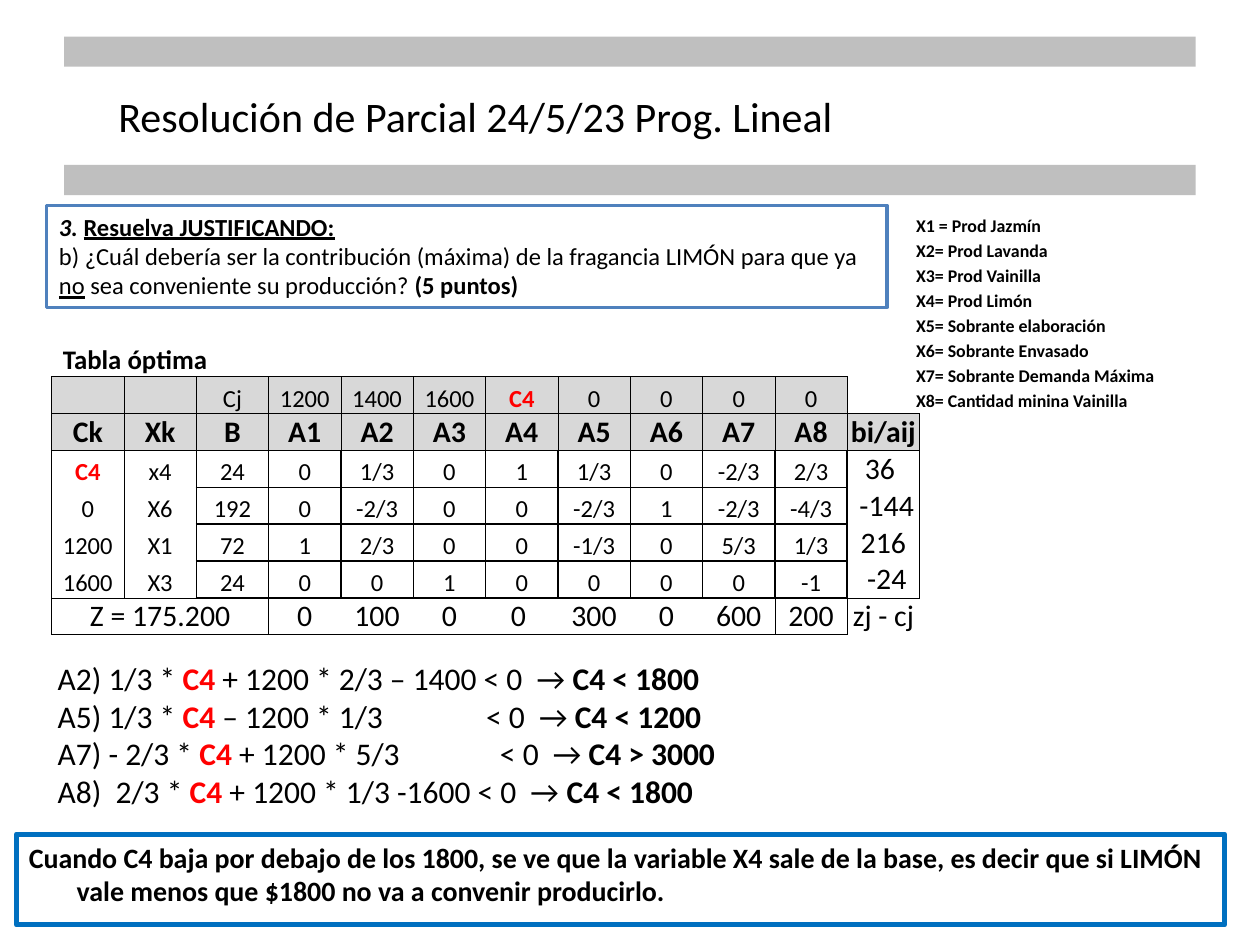
from pptx import Presentation
from pptx.dml.color import RGBColor
from pptx.enum.shapes import MSO_SHAPE as Form
from pptx.enum.text import MSO_ANCHOR as Anchor, PP_ALIGN as Align
from pptx.oxml.ns import qn
from pptx.util import Inches, Pt
from lxml.etree import SubElement

TITLE = "Resolución de Parcial 24/5/23 Prog. Lineal"
QUERY = [
    [("3. ", "bi"), ("Resuelva JUSTIFICANDO:", "bu")],
    [("b) ¿Cuál debería ser la contribución (máxima) de la fragancia LIMÓN para que ya ", ""),
     ("no", "u"), (" sea conveniente su producción? ", ""), ("(5 puntos)", "b")],
]
LEGEND = ["X1 = Prod Jazmín", "X2= Prod Lavanda", "X3= Prod Vainilla", "X4= Prod Limón",
          "X5= Sobrante elaboración", "X6= Sobrante Envasado",
          "X7= Sobrante Demanda Máxima", "X8= Cantidad minina Vainilla"]
GRID = [
    "||Cj|1200|1400|1600|C4|0|0|0|0|",
    "Ck|Xk|B|A1|A2|A3|A4|A5|A6|A7|A8|bi/aij",
    "C4|x4|24|0|1/3|0|1|1/3|0|-2/3|2/3|36 ",
    "0|X6|192|0|-2/3|0|0|-2/3|1|-2/3|-4/3| -144",
    "1200|X1|72|1|2/3|0|0|-1/3|0|5/3|1/3|216",
    "1600|X3|24|0|0|1|0|0|0|0|-1| -24",
    "Z = 175.200|||0|100|0|0 |300|0|600|200|zj - cj",
]
TESTS = [
    ("A2) 1/3 * ", "C4", " + 1200 * 2/3 – 1400 < 0  → ", "C4 < 1800", None),
    ("A5) 1/3 * ", "C4", " – 1200 * 1/3\t< 0  → ", "C4 < 1200", 3.4),
    ("A7) - 2/3 * ", "C4 ", "+ 1200 * 5/3\t< 0  → ", "C4 > 3000", 3.51),
    ("A8)  2/3 * ", "C4", " + 1200 * 1/3 -1600 < 0  → ", "C4 < 1800", None),
]
RESULT = ("Cuando C4 baja por debajo de los 1800, se ve que la variable X4 sale de la base, "
          "es decir que si LIMÓN vale menos que $1800 no va a convenir producirlo.")
BLACK, RED, GREY = "000000", "FF0000", "BFBFBF"


def color(code):
    return RGBColor.from_string(code)


def place(shape, box):
    shape.left, shape.top, shape.width, shape.height = map(Inches, box)


def write(para, runs, size):
    for text, style in runs:
        run = para.add_run()
        run.text = text
        font = run.font
        font.name, font.size = "Calibri", Pt(size)
        font.bold, font.italic, font.underline = (key in style for key in "biu")
        font.color.rgb = color(RED if "r" in style else BLACK)


def fill_text(shape, paras, size, hang=False, stops=()):
    frame = shape.text_frame
    frame.word_wrap = True
    frame.vertical_anchor = Anchor.TOP
    for i, runs in enumerate(paras):
        para = frame.add_paragraph() if i else frame.paragraphs[0]
        para.alignment = Align.LEFT
        para.space_before = Pt(size * 0.2 if hang and i else 0)
        props = para._p.get_or_add_pPr()
        if hang:
            props.set("marL", str(Inches(0.38)))
            props.set("indent", str(Inches(-0.38)))
            SubElement(props, qn("a:buNone"))
        if stops and stops[i]:
            tabs = SubElement(props, qn("a:tabLst"))
            SubElement(tabs, qn("a:tab"), pos=str(Inches(stops[i])), algn="l")
        write(para, runs, size)


def rect(box, fill=None, line=None, width=0):
    shape = slide.shapes.add_shape(Form.RECTANGLE, *map(Inches, box))
    shape.shadow.inherit = False
    if fill:
        shape.fill.solid()
        shape.fill.fore_color.rgb = color(fill)
    else:
        shape.fill.background()
    if line:
        shape.line.color.rgb = color(line)
        shape.line.width = Pt(width)
    else:
        shape.line.fill.background()
    return shape


def label(box):
    return slide.shapes.add_textbox(*map(Inches, box))


def sides(row, col):
    if row == 0 and col == 11:
        return "LB"
    if row == 6:
        return {3: "LTB", 9: "RTB", 11: "LT"}.get(col, "TB" if 3 < col < 9 else "LRTB")
    if row > 1 and col in (0, 1, 11):
        return "LR" + "T" * (row == 2) + "B" * (row == 5)
    return "LRTB"


def border(cell, row, col):
    props = cell._tc.get_or_add_tcPr()
    wide = 1 if 1 < row < 6 and 1 < col < 11 else 0.5
    shown = sides(row, col)
    for i, side in enumerate("LRTB"):
        line = SubElement(props, qn("a:ln" + side), w=str(Pt(wide)))
        props.remove(line)
        props.insert(i, line)
        if side in shown:
            paint = SubElement(line, qn("a:solidFill"))
            SubElement(paint, qn("a:srgbClr"), val=BLACK)
        else:
            SubElement(line, qn("a:noFill"))


def fill_cell(cell, text, row, col):
    cell.margin_left = cell.margin_right = cell.margin_top = cell.margin_bottom = 0
    cell.vertical_anchor = Anchor.MIDDLE if (row, col) == (1, 11) else Anchor.BOTTOM
    if row < 2 and (row, col) != (0, 11):
        cell.fill.solid()
        cell.fill.fore_color.rgb = color("D8D8D8")
    else:
        cell.fill.background()
    border(cell, row, col)
    para = cell.text_frame.paragraphs[0]
    para.alignment = Align.CENTER
    if text:
        style = "br" if text == "C4" else "b" if row == 1 else ""
        write(para, [(text, style)], 17 if row in (1, 6) or col == 11 else 14)
    else:
        SubElement(para._p, qn("a:endParaRPr"), sz="1400")


deck = Presentation()
deck.slide_width, deck.slide_height = Inches(10), Inches(7.5)
slide = deck.slides.add_slide(deck.slide_layouts[1])

for top in (0.29, 1.31):
    rect((0.51, top, 8.98, 0.24), GREY)

title = slide.shapes.title
place(title, (0.5, 0.3, 6.55, 1.24))
title.text_frame.vertical_anchor = Anchor.MIDDLE
head = title.text_frame.paragraphs[0]
head.alignment = Align.CENTER
write(head, [(TITLE, "")], 24)

fill_text(label((0.4, 2.67, 2.04, 0.36)), [[("Tabla óptima", "b")]], 15.3, hang=True)
fill_text(rect((0.37, 1.63, 6.67, 0.81), "FFFFFF", "4F81BD", 2), QUERY, 14)

legend = slide.placeholders[1]
place(legend, (7.17, 1.65, 2.59, 1.66))
fill_text(legend, [[(item, "b")] for item in LEGEND], 10.2, hang=True)

area = map(Inches, (0.41, 2.99, 6.89, 2.05))
table = slide.shapes.add_table(len(GRID), 12, *area).table
table.first_row = table.horz_banding = False
for row, line in enumerate(GRID):
    for col, text in enumerate(line.split("|")):
        fill_cell(table.cell(row, col), text, row, col)
table.cell(6, 0).merge(table.cell(6, 2))

tests = [[(lead, ""), (name, "br"), (rest, ""), (bound, "b")]
         for lead, name, rest, bound, _ in TESTS]
fill_text(label((0.36, 5.18, 6.42, 1.31)), tests, 18, stops=[test[-1] for test in TESTS])

fill_text(rect((0.13, 6.62, 9.59, 0.72), None, "0070C0", 3), [[(RESULT, "b")]], 16, hang=True)

deck.save("out.pptx")
